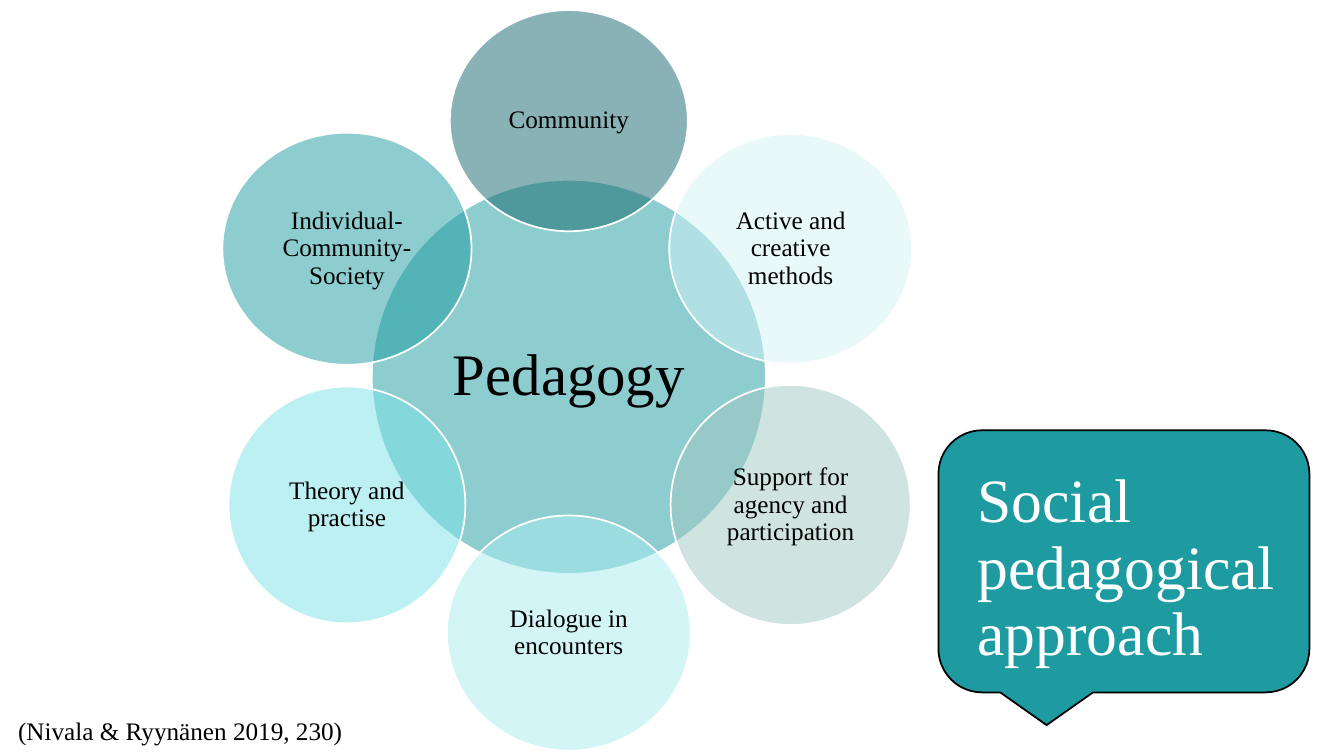
from dataclasses import dataclass
from math import cos, radians, sin

from lxml import etree
from pptx import Presentation
from pptx.dml.color import RGBColor
from pptx.enum.shapes import MSO_SHAPE
from pptx.enum.text import MSO_ANCHOR, PP_ALIGN
from pptx.oxml.ns import qn
from pptx.util import Pt

OVAL = MSO_SHAPE.OVAL
CALLOUT = MSO_SHAPE.ROUNDED_RECTANGULAR_CALLOUT
TOP, MIDDLE = MSO_ANCHOR.TOP, MSO_ANCHOR.MIDDLE
LEFT, CENTER = PP_ALIGN.LEFT, PP_ALIGN.CENTER

FONT = "Times New Roman"
COLORS = {
    "teal": "1D9BA1",
    "deep": "13676C",
    "ice": "D4F5F7",
    "sage": "A1C8C5",
    "pale": "A8ECEF",
    "aqua": "7DE2E7",
    "white": "FFFFFF",
    "black": "000000",
}
CENTER_X, CENTER_Y = 406.3, 269.2
ORBIT_RADIUS = 183


@dataclass
class Circle:
    text: str
    color: str
    width: float
    height: float
    size: float = 18
    margin: float = 1.8


HUB = Circle("Pedagogy", "teal", 281.5, 281.5, size=42, margin=4.2)
# Clockwise from the top
PETALS = [
    Circle("Community", "deep", 170, 158),
    Circle("Active and creative methods", "ice", 173.5, 164),
    Circle("Support for agency and participation", "sage", 171.5, 171.5),
    Circle("Dialogue in encounters", "pale", 174.2, 168),
    Circle("Theory and practise", "aqua", 169.2, 169.2),
    Circle("Individual-Community-Society", "teal", 178, 165.8),
]


def rgb(name: str) -> RGBColor:
    return RGBColor.from_string(COLORS[name])


def write_text(shape, text: str, *, size: float, color: str = "black",
               align=LEFT, anchor=TOP, spacing: float = 1.0) -> None:
    frame = shape.text_frame
    frame.word_wrap = True
    frame.vertical_anchor = anchor
    paragraph = frame.paragraphs[0]
    paragraph.alignment = align
    paragraph.line_spacing = spacing
    run = paragraph.add_run()
    run.text = text
    run.font.name = FONT
    run.font.size = Pt(size)
    run.font.color.rgb = rgb(color)


def add_filled_shape(slide, kind, left: float, top: float, width: float,
                     height: float, fill: str, line: str):
    shape = slide.shapes.add_shape(kind, Pt(left), Pt(top), Pt(width), Pt(height))
    shape.shadow.inherit = False
    shape.fill.solid()
    shape.fill.fore_color.rgb = rgb(fill)
    shape.line.color.rgb = rgb(line)
    shape.line.width = Pt(1.25)
    return shape


def add_circle(slide, circle: Circle, center_x: float, center_y: float) -> None:
    shape = add_filled_shape(
        slide, OVAL, center_x - circle.width / 2, center_y - circle.height / 2,
        circle.width, circle.height, circle.color, "white")
    # Half-transparent fill
    fill_color = shape.element.spPr.find(qn("a:solidFill")).find(qn("a:srgbClr"))
    etree.SubElement(fill_color, qn("a:alpha"), val="50000")
    frame = shape.text_frame
    frame.margin_left = frame.margin_right = Pt(circle.margin)
    frame.margin_top = frame.margin_bottom = Pt(circle.margin)
    write_text(shape, circle.text, size=circle.size, align=CENTER,
               anchor=MIDDLE, spacing=0.9)


def add_label(slide, left: float, top: float, width: float, height: float,
              text: str, **text_format) -> None:
    box = slide.shapes.add_textbox(Pt(left), Pt(top), Pt(width), Pt(height))
    write_text(box, text, **text_format)


def main() -> None:
    presentation = Presentation()
    presentation.slide_width = Pt(960)
    presentation.slide_height = Pt(540)
    slide = presentation.slides.add_slide(presentation.slide_layouts[6])

    # Hub and its ring of petals
    add_circle(slide, HUB, CENTER_X, CENTER_Y)
    for index, petal in enumerate(PETALS):
        angle = radians(index * 360 / len(PETALS) - 90)
        add_circle(slide, petal, CENTER_X + ORBIT_RADIUS * cos(angle),
                   CENTER_Y + ORBIT_RADIUS * sin(angle))

    # Callout with the title
    add_filled_shape(slide, CALLOUT, 670.3, 307.4, 265, 187.2, "teal", "black")
    add_label(slide, 691.2, 331.9, 239, 157, "Social pedagogical approach",
              size=44, color="white", spacing=0.9)

    # Reference
    add_label(slide, 5.8, 507.6, 353.5, 29, "(Nivala & Ryynänen 2019, 230)", size=18)

    presentation.save("out.pptx")


if __name__ == "__main__":
    main()
